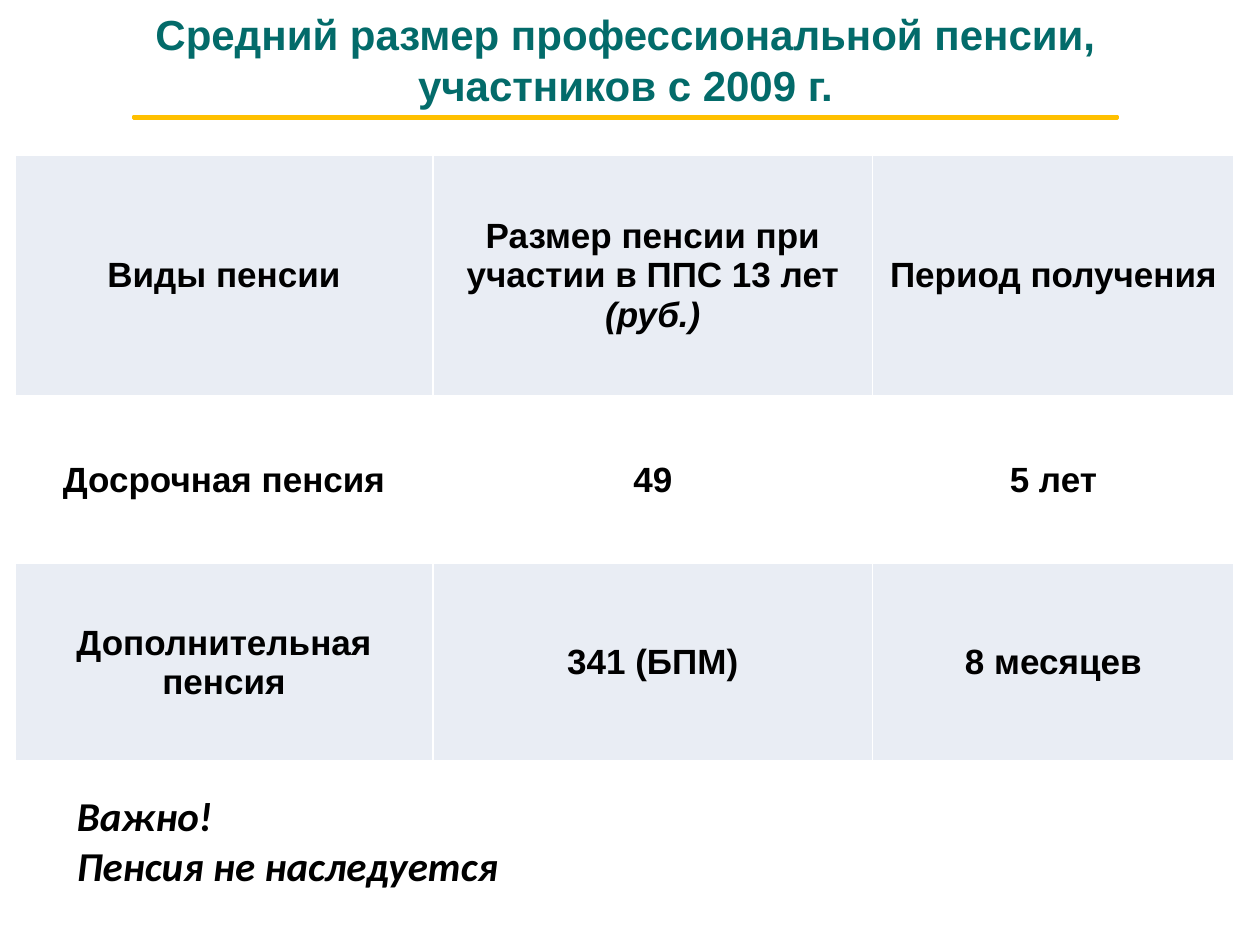
from lxml import etree
from pptx import Presentation
from pptx.dml.color import RGBColor
from pptx.enum.shapes import MSO_SHAPE
from pptx.enum.text import MSO_ANCHOR, PP_ALIGN
from pptx.oxml.ns import qn
from pptx.util import Cm, Pt

CENTER, LEFT = PP_ALIGN.CENTER, PP_ALIGN.LEFT
TOP, MIDDLE = MSO_ANCHOR.TOP, MSO_ANCHOR.MIDDLE
MINUS = MSO_SHAPE.MATH_MINUS

TEAL = RGBColor(0x03, 0x6B, 0x6A)
BLACK = RGBColor(0, 0, 0)
WHITE = RGBColor(0xFF, 0xFF, 0xFF)
BAND = RGBColor(0xE9, 0xED, 0xF4)
BLUE = RGBColor(0x4F, 0x81, 0xBD)
GOLD = RGBColor(0xFF, 0xC0, 0x00)

# Each text is a list of lines, each line a list of (words, format changes).
HEADING = [[("Средний размер профессиональной пенсии, участников с 2009 г.", {})]]
NOTE = [[("Важно! ", {})], [("Пенсия не наследуется", {})]]
PENSIONS = [
    [[("Виды пенсии", {})],
     [("Размер пенсии при участии в ППС 13 лет ", {}), ("(руб.)", {"italic": True})],
     [("Период получения", {})]],
    [[("Досрочная пенсия", {})], [("49", {})], [("5 лет", {})]],
    [[("Дополнительная пенсия", {})], [("341 (БПМ)", {})], [("8 месяцев", {})]],
]
COLUMN_WIDTHS = [8.43, 8.86, 7.29]
ROW_HEIGHTS = [4.85, 3.38, 3.99]
ROW_FILLS = [BAND, WHITE, BAND]

HEADING_FONT = {"name": "Arial", "size": Pt(24), "bold": True}
TABLE_FONT = {"name": "Arial", "size": Pt(20), "bold": True}
NOTE_FONT = {"name": "Calibri", "size": Pt(23.4), "bold": True, "italic": True}
CELL_FORMAT = {"vertical_anchor": MIDDLE, "margin_left": Cm(0.03),
               "margin_top": Cm(0.03), "margin_right": Cm(0.03), "margin_bottom": 0}


def set_all(target, values):
    for key, value in values.items():
        setattr(target, key, value)


def write(frame, lines, font, color, align):
    paragraph = frame.paragraphs[0]
    paragraph.alignment = align
    for number, line in enumerate(lines):
        if number:
            paragraph.add_line_break()
        for words, changes in line:
            run = paragraph.add_run()
            run.text = words
            set_all(run.font, {**font, **changes})
            run.font.color.rgb = color


def add_text(slide, box, lines, font, color, align, anchor):
    frame = slide.shapes.add_textbox(*map(Cm, box)).text_frame
    set_all(frame, {"word_wrap": True, "vertical_anchor": anchor})
    write(frame, lines, font, color, align)


def add_borders(cell, color, width):
    properties = cell._tc.get_or_add_tcPr()
    for place, side in enumerate(("a:lnL", "a:lnR", "a:lnT", "a:lnB")):
        border = etree.Element(qn(side), w=str(width))
        fill = etree.SubElement(border, qn("a:solidFill"))
        etree.SubElement(fill, qn("a:srgbClr"), val=str(color))
        properties.insert(place, border)


def add_pension_table(slide):
    table = slide.shapes.add_table(
        len(PENSIONS), len(COLUMN_WIDTHS), Cm(0.3), Cm(3.12),
        Cm(sum(COLUMN_WIDTHS)), Cm(sum(ROW_HEIGHTS))).table
    set_all(table, {"first_row": False, "horz_banding": False})
    for column, width in zip(table.columns, COLUMN_WIDTHS):
        column.width = Cm(width)
    for row, height, color, texts in zip(table.rows, ROW_HEIGHTS, ROW_FILLS, PENSIONS):
        row.height = Cm(height)
        for cell, line in zip(row.cells, texts):
            set_all(cell, CELL_FORMAT)
            cell.fill.solid()
            cell.fill.fore_color.rgb = color
            add_borders(cell, WHITE, Pt(1))
            write(cell.text_frame, [line], TABLE_FONT, BLACK, CENTER)


def add_underline(slide):
    underline = slide.shapes.add_shape(MINUS, Cm(-0.89), Cm(2.31), Cm(27), Cm(0.13))
    underline.shadow.inherit = False
    underline.fill.solid()
    underline.fill.fore_color.rgb = BLUE
    underline.line.color.rgb = GOLD
    underline.line.width = Pt(2)


def main():
    deck = Presentation()
    set_all(deck, {"slide_width": Cm(25.4), "slide_height": Cm(19.05)})
    slide = deck.slides.add_slide(deck.slide_layouts[6])
    add_text(slide, (0.71, 0.05, 23.8, 2.31), HEADING, HEADING_FONT, TEAL, CENTER, TOP)
    add_underline(slide)
    add_pension_table(slide)
    add_text(slide, (1.3, 15.93, 22.83, 2.01), NOTE, NOTE_FONT, BLACK, LEFT, MIDDLE)
    deck.save("out.pptx")


if __name__ == "__main__":
    main()
